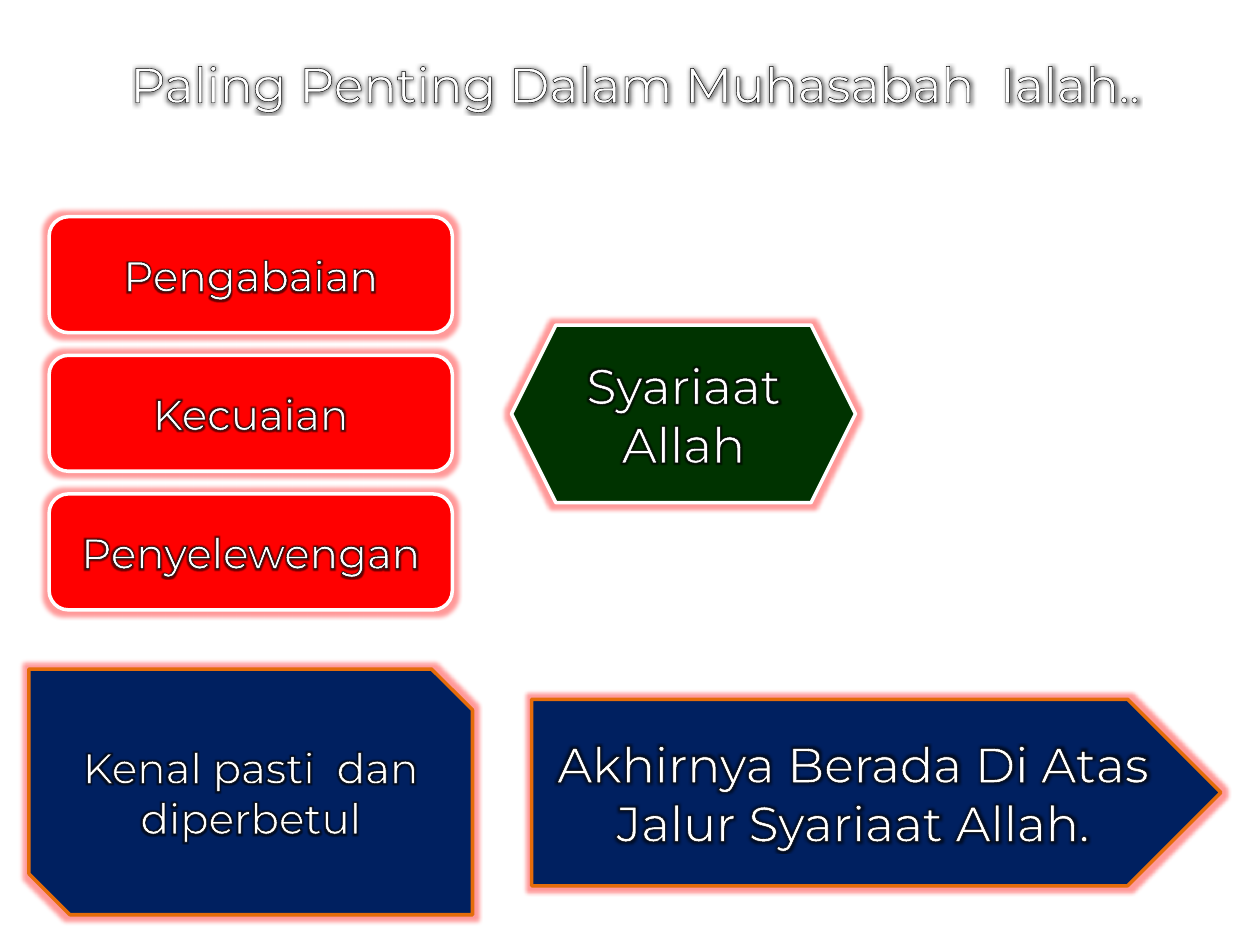
from lxml import etree
from pptx import Presentation, util as u
from pptx.dml.color import RGBColor
from pptx.enum import shapes, text
from pptx.oxml import ns

FONT = "Montserrat"
WHITE, BLACK, RED = "FFFFFF", "000000", "FF0000"
GREEN, NAVY, ORANGE = "003300", "002060", "E46C0A"
WIDTH, HEIGHT = 10, 7.5
LEFT, TOP, PITCH = 0.39, 1.72, 1.1
FAULTS = ["Pengabaian", "Kecuaian", "Penyelewengan"]


def rgb(value):
    return RGBColor.from_string(value)


def add_colour(parent, value, alpha=100):
    clr = etree.SubElement(parent, ns.qn("a:srgbClr"), val=value)
    if alpha < 100:
        etree.SubElement(clr, ns.qn("a:alpha"), val=str(alpha * 1000))


def make_glow(radius, colour, alpha):
    effects = etree.Element(ns.qn("a:effectLst"))
    glow = etree.SubElement(effects, ns.qn("a:glow"), rad=str(u.Pt(radius)))
    add_colour(glow, colour, alpha)
    return effects


def write_text(s, words, size):
    tf = s.text_frame
    tf.word_wrap = True
    tf.vertical_anchor = text.MSO_ANCHOR.MIDDLE
    p = tf.paragraphs[0]
    p.alignment = text.PP_ALIGN.CENTER
    p.font.name, p.font.size = FONT, u.Pt(size)
    p.font.color.rgb = rgb(WHITE)
    r = p.add_run()
    r.text = words
    props = r.font._element
    ln = etree.SubElement(props, ns.qn("a:ln"), w=str(u.Pt(0.75)))
    add_colour(etree.SubElement(ln, ns.qn("a:solidFill")), BLACK)
    add_colour(etree.SubElement(props, ns.qn("a:solidFill")), WHITE)
    props.append(make_glow(4, BLACK, 60))


def add_title(slide, words, box):
    s = slide.shapes.title
    s.left, s.top, s.width, s.height = map(u.Inches, box)
    write_text(s, words, 28)


def add_panel(slide, kind, box, fill, line, words, size):
    s = slide.shapes.add_shape(kind, *map(u.Inches, box))
    s.fill.solid()
    s.fill.fore_color.rgb = rgb(fill)
    s.line.color.rgb = rgb(line)
    s.line.width = u.Pt(2)
    s.shadow.inherit = False
    effects = s._element.spPr.find(ns.qn("a:effectLst"))
    effects.getparent().replace(effects, make_glow(5, RED, 40))
    write_text(s, words, size)


def main():
    prs = Presentation()
    prs.slide_width, prs.slide_height = u.Inches(WIDTH), u.Inches(HEIGHT)
    slide = prs.slides.add_slide(prs.slide_layouts[5])
    kinds = shapes.MSO_SHAPE

    add_title(slide, "Paling Penting Dalam Muhasabah  Ialah..",
              (LEFT, 0.23, 9.3, 0.86))
    for row, fault in enumerate(FAULTS):
        add_panel(slide, kinds.ROUNDED_RECTANGLE,
                  (LEFT, TOP + row * PITCH, 3.2, 0.92), RED, WHITE, fault, 24)
    add_panel(slide, kinds.HEXAGON, (4.06, 2.58, 2.73, 1.41),
              GREEN, WHITE, "Syariaat Allah", 28)
    add_panel(slide, kinds.SNIP_2_DIAG_RECTANGLE, (0.23, 5.31, 3.52, 1.95),
              NAVY, ORANGE, "Kenal pasti  dan diperbetul", 24)
    add_panel(slide, kinds.PENTAGON, (4.22, 5.55, 5.47, 1.48),
              NAVY, ORANGE, "Akhirnya Berada Di Atas Jalur Syariaat Allah.", 28)
    prs.save("out.pptx")


if __name__ == "__main__":
    main()
